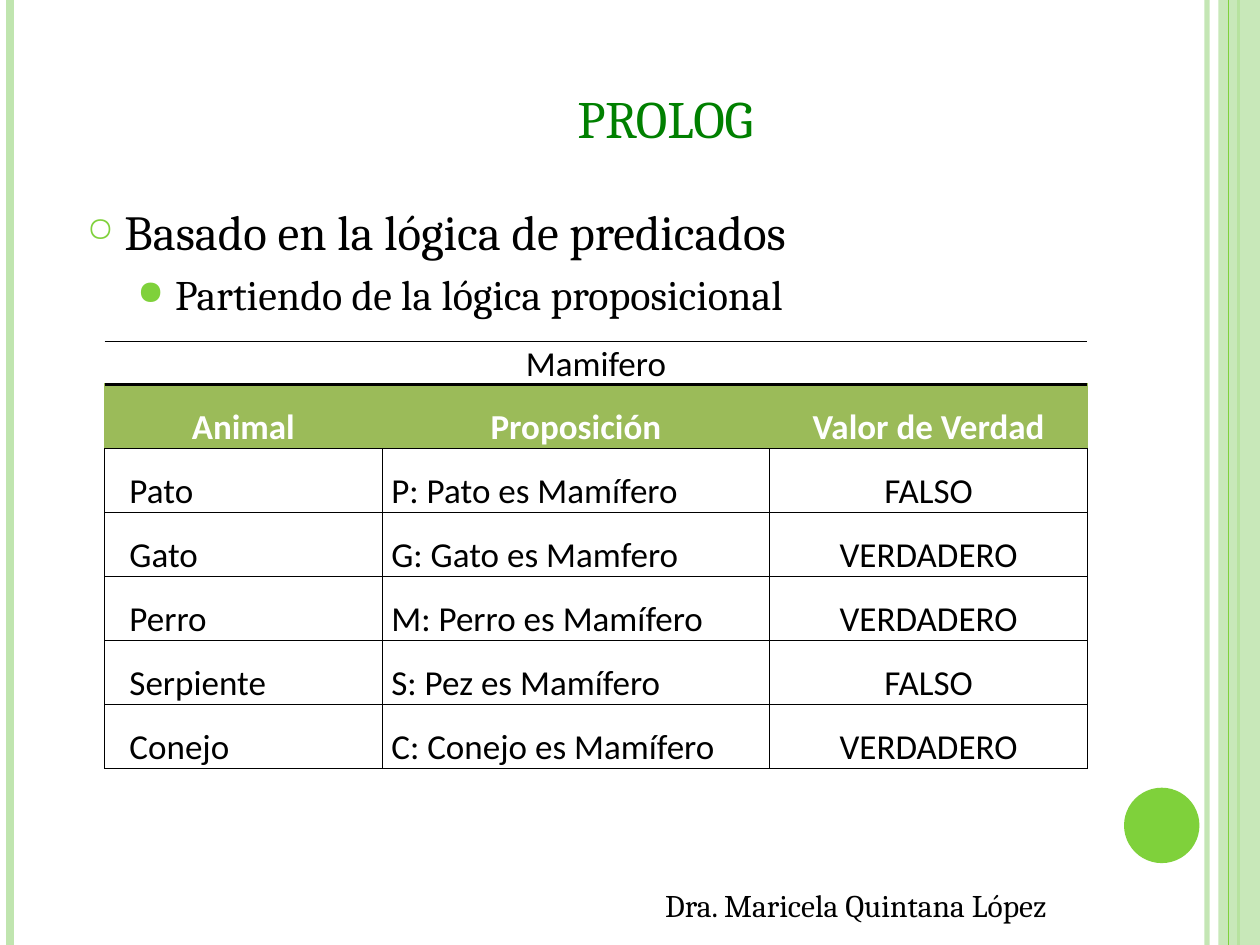
from dataclasses import dataclass
from typing import Optional

from lxml.etree import SubElement
from pptx import Presentation
from pptx.dml.color import RGBColor
from pptx.enum.shapes import MSO_CONNECTOR, MSO_SHAPE
from pptx.enum.text import MSO_ANCHOR, PP_ALIGN
from pptx.oxml.ns import qn
from pptx.util import Cm, Pt

HUES = {
    "black": "000000",
    "white": "FFFFFF",
    "title": "008000",
    "green": "7FD13B",
    "pale": "C0E5AF",
    "head": "9BBB59",
}
WIDE, HIGH = 25.4, 19.05


@dataclass
class Stripe:
    x: float
    width: float
    hue: str
    alpha: int = 100


@dataclass
class Block:
    x: float
    y: float
    w: float
    h: float
    wrap: bool = True
    anchor: MSO_ANCHOR = MSO_ANCHOR.TOP
    left: float = 0.25


@dataclass
class Line:
    text: str
    size: float
    hue: str = "black"
    font: str = "Cambria"
    align: PP_ALIGN = PP_ALIGN.LEFT
    bold: bool = False


@dataclass
class Bullet:
    mark: str
    scale: int
    indent: float
    before: float


@dataclass
class Edge:
    hue: str
    width: float


def color(name: str) -> RGBColor:
    return RGBColor.from_string(HUES[name])


def fade(shape, alpha: int) -> None:
    if alpha < 100:
        tint = next(shape._element.spPr.iter(qn("a:srgbClr")))
        SubElement(tint, qn("a:alpha"), val=str(alpha * 1000))


def draw_stripe(slide, item: Stripe) -> None:
    line = slide.shapes.add_connector(
        MSO_CONNECTOR.STRAIGHT, Cm(item.x), Cm(0), Cm(item.x), Cm(HIGH))
    line.line.color.rgb = color(item.hue)
    line.line.width = Pt(item.width)
    fade(line, item.alpha)
    SubElement(line._element.spPr, qn("a:effectLst"))


def draw_shape(slide, kind: MSO_SHAPE, box: Block, hue: str, alpha: int = 100) -> None:
    shape = slide.shapes.add_shape(kind, Cm(box.x), Cm(box.y), Cm(box.w), Cm(box.h))
    shape.shadow.inherit = False
    shape.fill.solid()
    shape.fill.fore_color.rgb = color(hue)
    shape.line.fill.background()
    fade(shape, alpha)


def write(para, line: Line) -> None:
    para.alignment = line.align
    run = para.add_run()
    run.text = line.text
    run.font.name = line.font
    run.font.size = Pt(line.size)
    run.font.bold = line.bold
    run.font.color.rgb = color(line.hue)


def add_mark(para, item: Bullet) -> None:
    para.space_before = Pt(item.before)
    props = para._p.get_or_add_pPr()
    props.set("marL", str(Cm(item.indent)))
    props.set("indent", str(Cm(-0.76)))
    tint = SubElement(props, qn("a:buClr"))
    SubElement(tint, qn("a:srgbClr"), val=HUES["green"])
    SubElement(props, qn("a:buSzPct"), val=str(item.scale * 1000))
    SubElement(props, qn("a:buChar"), char=item.mark)


def draw_text(slide, box: Block, lines: list[Line],
              marks: Optional[list[Bullet]] = None) -> None:
    frame = slide.shapes.add_textbox(Cm(box.x), Cm(box.y), Cm(box.w), Cm(box.h)).text_frame
    frame.word_wrap = box.wrap
    frame.vertical_anchor = box.anchor
    frame.margin_left = Cm(box.left)
    for spot, line in enumerate(lines):
        para = frame.add_paragraph() if spot else frame.paragraphs[0]
        if marks:
            add_mark(para, marks[spot])
        write(para, line)


def set_edges(cell, edges: dict[str, Optional[Edge]]) -> None:
    props = cell._tc.get_or_add_tcPr()
    for side in "LRTB":
        edge = edges.get(side)
        line = SubElement(props, qn(f"a:ln{side}"))
        if edge is None:
            SubElement(line, qn("a:noFill"))
            continue
        line.set("w", str(Pt(edge.width)))
        fill = SubElement(line, qn("a:solidFill"))
        SubElement(fill, qn("a:srgbClr"), val=HUES[edge.hue])


def fill_cell(cell, line: Line, edges: dict[str, Optional[Edge]],
              fill: Optional[str] = None, left: float = 0.03) -> None:
    set_edges(cell, edges)
    if fill:
        cell.fill.solid()
        cell.fill.fore_color.rgb = color(fill)
    else:
        cell.fill.background()
    cell.vertical_anchor = MSO_ANCHOR.BOTTOM
    cell.margin_left = Cm(left)
    cell.margin_right = cell.margin_top = Cm(0.03)
    cell.margin_bottom = Cm(0)
    write(cell.text_frame.paragraphs[0], line)


def draw_table(slide) -> None:
    heads = ["Animal", "Proposición", "Valor de Verdad"]
    facts = [
        ("Pato", "P: Pato es Mamífero", "FALSO"),
        ("Gato", "G: Gato es Mamfero", "VERDADERO"),
        ("Perro", "M: Perro es Mamífero", "VERDADERO"),
        ("Serpiente", "S: Pez es Mamífero", "FALSO"),
        ("Conejo", "C: Conejo es Mamífero", "VERDADERO"),
    ]
    widths = [5.59, 7.82, 6.4]
    tall = [0.66] + [1.29] * (len(facts) + 1)
    table = slide.shapes.add_table(
        len(tall), len(widths), Cm(2.11), Cm(6.88), Cm(sum(widths)), Cm(sum(tall))).table
    table.first_row = table.horz_banding = False
    for col, width in zip(table.columns, widths):
        col.width = Cm(width)
    for row, height in zip(table.rows, tall):
        row.height = Cm(height)

    thin, thick, side = Edge("black", 0.5), Edge("black", 2), Edge("head", 0.5)
    mid = PP_ALIGN.CENTER
    table.cell(0, 0).merge(table.cell(0, 2))
    fill_cell(table.cell(0, 0), Line("Mamifero", 20, font="Calibri", align=mid),
              {"T": thin, "B": thick})
    for c in (1, 2):
        set_edges(table.cell(0, c), {"T": thin, "B": thick})
    for c, text in enumerate(heads):
        edges = {"T": thick, "B": thin,
                 "L": side if c == 0 else None, "R": side if c == 2 else None}
        fill_cell(table.cell(1, c), Line(text, 20, "white", "Calibri", mid, True),
                  edges, "head")
    styles = [(PP_ALIGN.LEFT, 0.5), (PP_ALIGN.LEFT, 0.19), (mid, 0.03)]
    for r, fact in enumerate(facts, 2):
        for c, (text, (align, left)) in enumerate(zip(fact, styles)):
            fill_cell(table.cell(r, c), Line(text, 20, font="Calibri", align=align),
                      dict.fromkeys("LRTB", thin), left=left)


def main() -> None:
    deck = Presentation()
    deck.slide_width, deck.slide_height = Cm(WIDE), Cm(HIGH)
    slide = deck.slides.add_slide(deck.slide_layouts[6])
    for item in (Stripe(24.33, 3, "pale", 93), Stripe(0.2, 4.5, "pale"),
                 Stripe(24.97, 1.5, "green")):
        draw_stripe(slide, item)
    draw_shape(slide, MSO_SHAPE.RECTANGLE, Block(24.56, 0, 0.84, HIGH), "pale", 87)
    draw_stripe(slide, Stripe(24.77, 0.75, "green"))
    draw_shape(slide, MSO_SHAPE.OVAL, Block(22.66, 15.88, 1.52, 1.52), "green")
    draw_text(slide, Block(13.16, 17.73, 9.55, 1.02, wrap=False),
              [Line("Dra. Maricela Quintana López", 18)])
    draw_text(slide, Block(1.27, 1.12, 20.75, 2, anchor=MSO_ANCHOR.BOTTOM, left=3.78),
              [Line("PROLOG", 30, "title", align=PP_ALIGN.CENTER)])
    draw_text(slide, Block(1.5, 3.94, 20.75, 13.54),
              [Line("Basado en la lógica de predicados", 28),
               Line("Partiendo de la lógica proposicional", 24)],
              [Bullet("○", 70, 0.76, 6), Bullet("●", 80, 1.78, 4.8)])
    draw_table(slide)
    deck.save("out.pptx")


if __name__ == "__main__":
    main()
